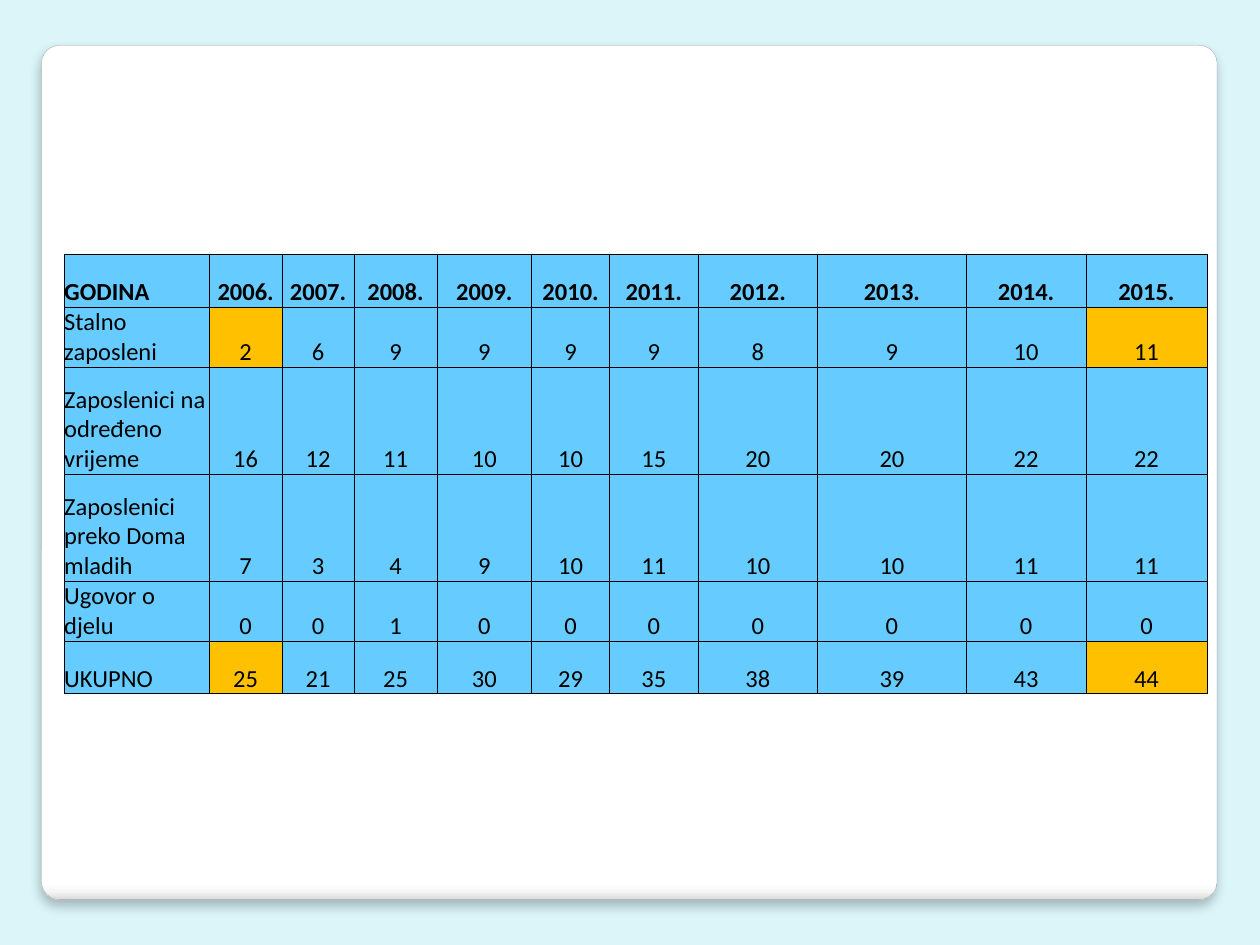
from lxml import etree
from pptx import Presentation
from pptx.dml.color import RGBColor
from pptx.enum.shapes import MSO_SHAPE
from pptx.enum.text import MSO_ANCHOR, PP_ALIGN
from pptx.oxml.ns import qn
from pptx.util import Inches, Pt

ROUNDED = MSO_SHAPE.ROUNDED_RECTANGLE
BOTTOM = MSO_ANCHOR.BOTTOM
LEFT, CENTER = PP_ALIGN.LEFT, PP_ALIGN.CENTER

COLORS = {
    "background": "DBF5F9",
    "panel": "FFFFFF",
    "panel_shade": "F7F7F7",
    "panel_edge": "DADADA",
    "panel_line": "A4A4A4",
    "cell": "66CCFF",
    "highlight": "FFC000",
    "ink": "000000",
}
PANEL_STOPS = [(0, "panel"), (98, "panel"), (99, "panel_shade"), (100, "panel_edge")]

STAFF = [
    ["GODINA", *[f"{year}." for year in range(2006, 2016)]],
    ["Stalno zaposleni", 2, 6, 9, 9, 9, 9, 8, 9, 10, 11],
    ["Zaposlenici na određeno vrijeme", 16, 12, 11, 10, 10, 15, 20, 20, 22, 22],
    ["Zaposlenici preko Doma mladih", 7, 3, 4, 9, 10, 11, 10, 10, 11, 11],
    ["Ugovor o djelu", 0, 0, 1, 0, 0, 0, 0, 0, 0, 0],
    ["UKUPNO", 25, 21, 25, 30, 29, 35, 38, 39, 43, 44],
]
COLUMN_WIDTHS = [1.15, 0.58, 0.57, 0.66, 0.75, 0.62, 0.7, 0.95, 1.18, 0.95, 0.96]
ROW_HEIGHTS = [0.42, 0.42, 0.85, 0.85, 0.42, 0.42]
HIGHLIGHTED_ROWS = (1, 5)
HIGHLIGHTED_COLUMNS = (1, 10)


def rgb(name):
    return RGBColor.from_string(COLORS[name])


def add_color(parent, name):
    color = etree.SubElement(parent, qn("a:srgbClr"), val=COLORS[name])
    return color


def set_gradient(shape, stops):
    shape.fill.gradient()
    shape.fill.gradient_angle = 270
    stop_list = shape._element.spPr.find(qn("a:gradFill")).find(qn("a:gsLst"))
    for default_stop in list(stop_list):
        stop_list.remove(default_stop)
    for percent, name in stops:
        add_color(etree.SubElement(stop_list, qn("a:gs"), pos=str(percent * 1000)), name)


def set_shadow(shape, blur, distance, opacity):
    shape.shadow.inherit = False
    effects = shape._element.spPr.find(qn("a:effectLst"))
    shadow = etree.SubElement(
        effects, qn("a:outerShdw"), blurRad=str(Pt(blur)), dist=str(Pt(distance)),
        dir="5400000", rotWithShape="0")
    etree.SubElement(add_color(shadow, "ink"), qn("a:alpha"), val=str(opacity * 1000))


def add_panel(slide):
    panel = slide.shapes.add_shape(
        ROUNDED, Inches(0.33), Inches(0.36), Inches(9.33), Inches(6.78))
    panel.adjustments[0] = 0.021
    set_gradient(panel, PANEL_STOPS)
    panel.line.color.rgb = rgb("panel_line")
    panel.line.width = Pt(0.16)
    set_shadow(panel, blur=6, distance=4, opacity=25)


def set_borders(cell):
    properties = cell._tc.get_or_add_tcPr()
    for index, side in enumerate(("a:lnL", "a:lnR", "a:lnT", "a:lnB")):
        border = etree.Element(qn(side), w=str(Pt(0.5)))
        add_color(etree.SubElement(border, qn("a:solidFill")), "ink")
        properties.insert(index, border)


def fill_cell(cell, value, fill, alignment, bold):
    cell.margin_left = cell.margin_right = cell.margin_top = cell.margin_bottom = 0
    cell.vertical_anchor = BOTTOM
    cell.fill.solid()
    cell.fill.fore_color.rgb = rgb(fill)
    set_borders(cell)
    paragraph = cell.text_frame.paragraphs[0]
    paragraph.text = str(value)
    paragraph.alignment = alignment
    font = paragraph.runs[0].font
    font.name = "Calibri"
    font.size = Pt(14)
    font.bold = bold
    font.color.rgb = rgb("ink")


def add_staff_table(slide):
    table = slide.shapes.add_table(
        len(STAFF), len(COLUMN_WIDTHS), Inches(0.51), Inches(2.02),
        Inches(sum(COLUMN_WIDTHS)), Inches(sum(ROW_HEIGHTS))).table
    for column, width in zip(table.columns, COLUMN_WIDTHS):
        column.width = Inches(width)
    for row, height in zip(table.rows, ROW_HEIGHTS):
        row.height = Inches(height)
    for r, values in enumerate(STAFF):
        for c, value in enumerate(values):
            highlighted = r in HIGHLIGHTED_ROWS and c in HIGHLIGHTED_COLUMNS
            fill_cell(
                table.cell(r, c), value,
                fill="highlight" if highlighted else "cell",
                alignment=CENTER if c else LEFT,
                bold=r == 0)


def main():
    presentation = Presentation()
    presentation.slide_width = Inches(10)
    presentation.slide_height = Inches(7.5)
    slide = presentation.slides.add_slide(presentation.slide_layouts[6])
    slide.background.fill.solid()
    slide.background.fill.fore_color.rgb = rgb("background")
    add_panel(slide)
    add_staff_table(slide)
    presentation.save("out.pptx")


if __name__ == "__main__":
    main()
